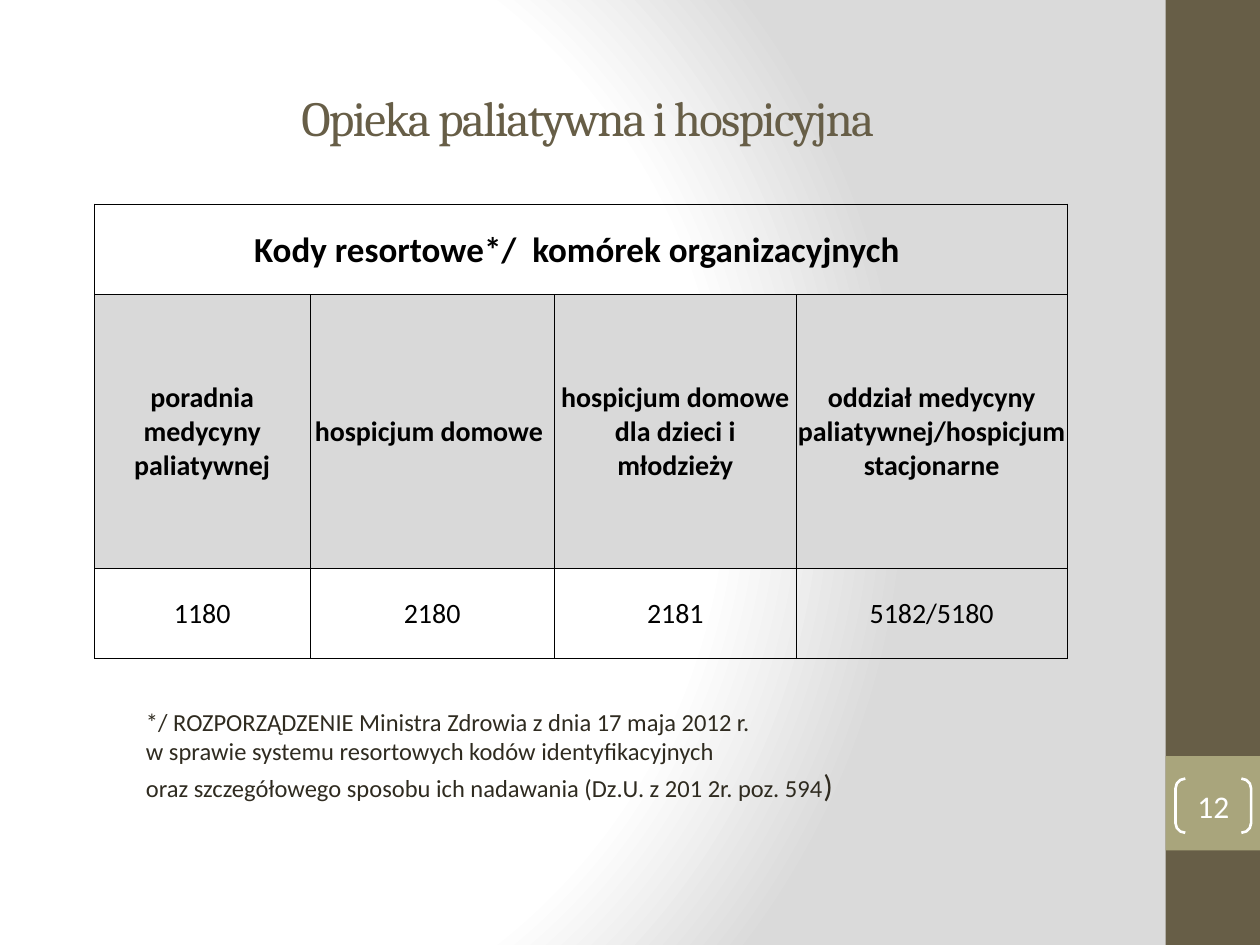
from dataclasses import dataclass

from lxml import etree
from pptx import Presentation
from pptx.dml.color import RGBColor
from pptx.enum.shapes import MSO_SHAPE
from pptx.enum.text import MSO_ANCHOR, PP_ALIGN
from pptx.oxml import parse_xml
from pptx.oxml.ns import nsdecls, qn
from pptx.util import Inches, Pt

RECTANGLE = MSO_SHAPE.RECTANGLE
BRACKETS = MSO_SHAPE.DOUBLE_BRACKET
MIDDLE = MSO_ANCHOR.MIDDLE
TOP = MSO_ANCHOR.TOP
LEFT = PP_ALIGN.LEFT
CENTER = PP_ALIGN.CENTER


@dataclass(frozen=True)
class Theme:
    """Colours, fonts and type sizes of the slide."""
    dark: str = "675E47"
    accent: str = "A9A57C"
    ink: str = "2F2B20"
    black: str = "000000"
    white: str = "FFFFFF"
    shade: str = "DADADA"
    header: str = "D9D9D9"
    heading_font: str = "Cambria"
    body_font: str = "Calibri"
    title_size: int = 28
    table_title_size: int = 20
    number_size: int = 18
    cell_size: int = 16
    note_size: int = 14


THEME = Theme()
COLUMN_WIDTHS = (1.71, 1.94, 1.92, 2.15)
ROW_HEIGHTS = (0.72, 2.17, 0.72)
TABLE_TITLE = "Kody resortowe*/  komórek organizacyjnych "
UNITS = (
    ("poradnia medycyny paliatywnej", "1180"),
    ("hospicjum domowe ", "2180"),
    ("hospicjum domowe dla dzieci i młodzieży", "2181"),
    ("oddział medycyny paliatywnej/hospicjum stacjonarne", "5182/5180"),
)
NOTE_LINES = (
    "*/ ROZPORZĄDZENIE Ministra Zdrowia z dnia 17 maja 2012 r.",
    "w sprawie systemu resortowych kodów identyfikacyjnych",
    "oraz szczegółowego sposobu ich nadawania (Dz.U. z 201 2r. poz. 594",
)


def add_text(paragraph, text, *, size, color=THEME.black, font=THEME.body_font,
             bold=False, align=LEFT, spacing=None):
    """Append a formatted run to a paragraph."""
    paragraph.alignment = align
    run = paragraph.add_run()
    run.text = text
    run.font.size = Pt(size)
    run.font.name = font
    run.font.bold = bold
    run.font.color.rgb = RGBColor.from_string(color)
    if spacing is not None:
        run.font._element.set("spc", str(spacing * 100))


def add_text_box(slide, box, anchor):
    """Add a wrapping text box and return its text frame."""
    frame = slide.shapes.add_textbox(*map(Inches, box)).text_frame
    frame.word_wrap = True
    frame.vertical_anchor = anchor
    return frame


def add_block(slide, box, color):
    """Add a plain filled rectangle."""
    shape = slide.shapes.add_shape(RECTANGLE, *map(Inches, box))
    shape.shadow.inherit = False
    shape.fill.solid()
    shape.fill.fore_color.rgb = RGBColor.from_string(color)
    shape.line.fill.background()


def set_background(slide):
    """Give the slide a radial gradient from white to grey."""
    slide.background.fill.solid()
    properties = slide.element.find(".//" + qn("p:bgPr"))
    stops = "".join(
        f'<a:gs pos="{position * 1000}"><a:srgbClr val="{color}"/></a:gs>'
        for position, color in ((0, THEME.white), (75, THEME.white), (100, THEME.shade)))
    gradient = parse_xml(
        f'<a:gradFill {nsdecls("a")} rotWithShape="1"><a:gsLst>{stops}</a:gsLst>'
        '<a:path path="circle"><a:fillToRect l="20000" t="50000" r="100000" b="50000"/>'
        '</a:path></a:gradFill>')
    properties.replace(properties.find(qn("a:solidFill")), gradient)


def add_sidebar(slide, box, number):
    """Draw the side band with the bracketed slide number."""
    left, top, width, height = box
    tile_top = top + 0.8 * height
    add_block(slide, box, THEME.dark)
    add_block(slide, (left, tile_top, width, width), THEME.accent)
    brackets = slide.shapes.add_shape(
        BRACKETS, *map(Inches, (left + 0.08, tile_top + 0.18, 0.6, 0.43)))
    brackets.adjustments[0] = 0.18
    brackets.shadow.inherit = False
    brackets.fill.background()
    brackets.line.color.rgb = RGBColor.from_string(THEME.white)
    brackets.line.width = Pt(1.5)
    frame = brackets.text_frame
    frame.margin_left = frame.margin_right = frame.margin_top = frame.margin_bottom = 0
    frame.vertical_anchor = MIDDLE
    add_text(frame.paragraphs[0], number, size=THEME.number_size,
             color=THEME.white, align=CENTER)


def add_title(slide, box, text):
    """Place the centred slide title."""
    frame = add_text_box(slide, box, MIDDLE)
    add_text(frame.paragraphs[0], text, size=THEME.title_size, color=THEME.dark,
             font=THEME.heading_font, align=CENTER, spacing=-1)


def format_cell(cell, fill):
    """Set the margins, borders and fill of a cell."""
    cell.vertical_anchor = MIDDLE
    cell.margin_left = cell.margin_right = cell.margin_top = Inches(0.01)
    cell.margin_bottom = 0
    properties = cell._tc.get_or_add_tcPr()
    for side in ("a:lnL", "a:lnR", "a:lnT", "a:lnB"):
        line = etree.SubElement(properties, qn(side), w=str(Pt(0.5)))
        solid = etree.SubElement(line, qn("a:solidFill"))
        etree.SubElement(solid, qn("a:srgbClr"), val=THEME.black)
    if fill:
        cell.fill.solid()
        cell.fill.fore_color.rgb = RGBColor.from_string(fill)
    else:
        cell.fill.background()


def add_code_table(slide, box):
    """Build the table of unit codes under a merged heading."""
    table = slide.shapes.add_table(
        len(ROW_HEIGHTS), len(COLUMN_WIDTHS), *map(Inches, box)).table
    table.first_row = table.horz_banding = False
    for column, width in zip(table.columns, COLUMN_WIDTHS):
        column.width = Inches(width)
    for row, height in zip(table.rows, ROW_HEIGHTS):
        row.height = Inches(height)
    names, codes = zip(*UNITS)
    rows = (
        ((TABLE_TITLE, "", "", ""), THEME.table_title_size, True, None),
        (names, THEME.cell_size, True, THEME.header),
        (codes, THEME.cell_size, False, None),
    )
    for row, (texts, size, bold, fill) in zip(table.rows, rows):
        for cell, text in zip(row.cells, texts):
            format_cell(cell, fill)
            if text:
                add_text(cell.text_frame.paragraphs[0], text, size=size,
                         bold=bold, align=CENTER)
    table.cell(0, 0).merge(table.cell(0, len(COLUMN_WIDTHS) - 1))


def add_note(slide, box):
    """Place the legal footnote with its larger closing bracket."""
    frame = add_text_box(slide, box, TOP)
    for index, text in enumerate(NOTE_LINES):
        paragraph = frame.add_paragraph() if index else frame.paragraphs[0]
        add_text(paragraph, text, size=THEME.note_size, color=THEME.ink)
    add_text(paragraph, ")", size=THEME.number_size, color=THEME.ink)


def main():
    """Build and save the presentation."""
    presentation = Presentation()
    presentation.slide_width = Inches(10)
    presentation.slide_height = Inches(7.5)
    slide = presentation.slides.add_slide(presentation.slide_layouts[6])
    set_background(slide)
    add_sidebar(slide, (9.25, 0, 0.75, 7.5), "12")
    add_title(slide, (0.5, 0.3, 8.33, 1.25), "Opieka paliatywna i hospicyjna")
    add_code_table(slide, (0.75, 1.62, sum(COLUMN_WIDTHS), sum(ROW_HEIGHTS)))
    add_note(slide, (1.06, 5.56, 7.24, 0.88))
    presentation.save("out.pptx")


if __name__ == "__main__":
    main()
